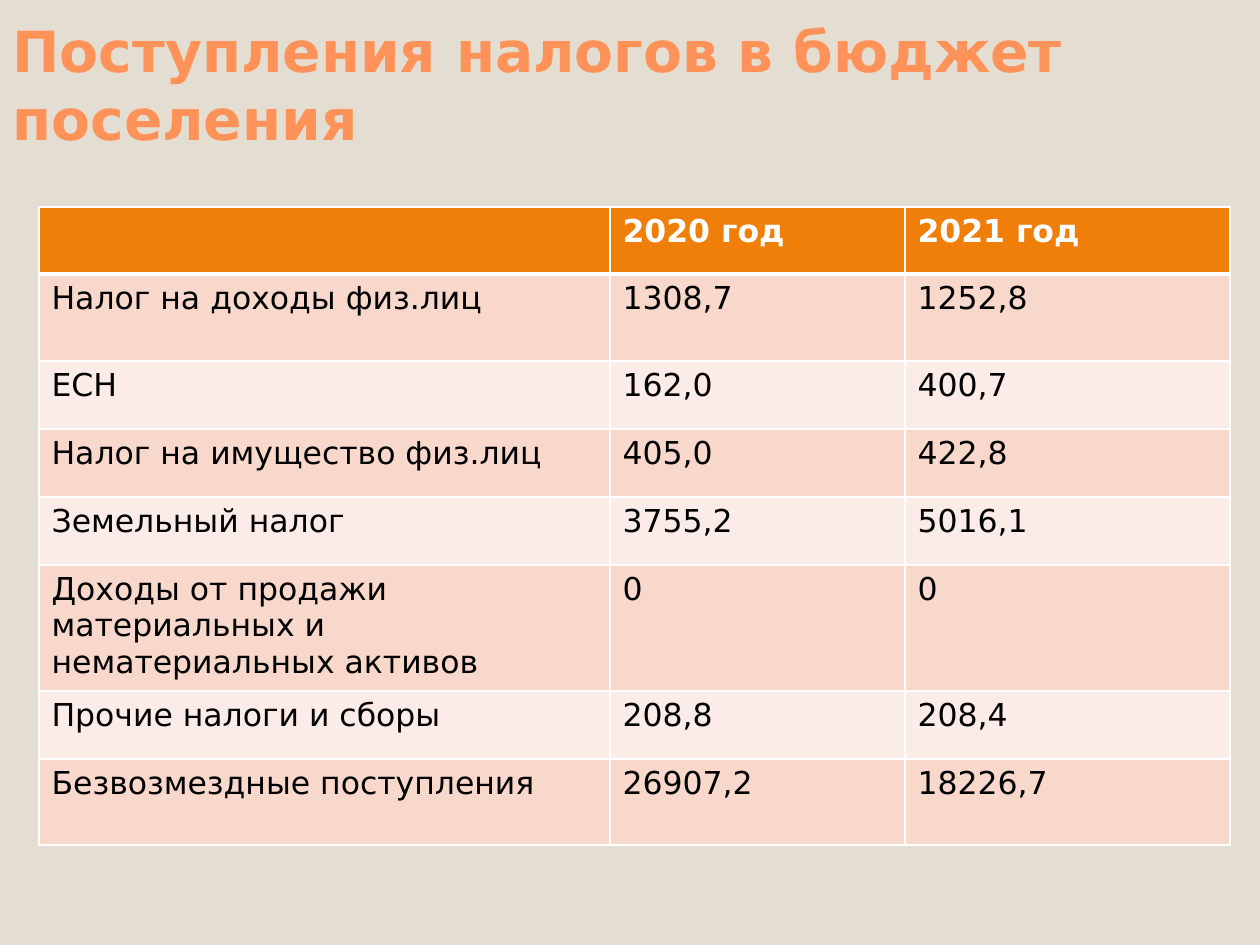
"""Build a slide with a table of tax receipts for two years."""
from dataclasses import dataclass

from lxml import etree
from pptx import Presentation
from pptx import util as u
from pptx.dml.color import RGBColor
from pptx.enum import text
from pptx.oxml.ns import qn

PX = u.Inches(1) // 126
FONT = "DejaVu Sans"
WHITE, BLACK, ORANGE = "FFFFFF", "000000", "F07F09"
BANDS = ("F9D8CC", "FCECE7")
COLUMN_WIDTHS = (571, 295, 325)


@dataclass(frozen=True)
class TableRow:
    height: int
    label: str
    year_2020: str
    year_2021: str

    @property
    def values(self) -> tuple[str, str, str]:
        return self.label, self.year_2020, self.year_2021


ROWS = (
    TableRow(67, "", "2020 год", "2021 год"),
    TableRow(87, "Налог на доходы физ.лиц", "1308,7", "1252,8"),
    TableRow(68, "ЕСН", "162,0", "400,7"),
    TableRow(68, "Налог на имущество физ.лиц", "405,0", "422,8"),
    TableRow(68, "Земельный налог", "3755,2", "5016,1"),
    TableRow(122, "Доходы от продажи материальных и нематериальных активов", "0", "0"),
    TableRow(68, "Прочие налоги и сборы", "208,8", "208,4"),
    TableRow(86, "Безвозмездные поступления", "26907,2", "18226,7"),
)


def px(length: int) -> int:
    return length * PX


def color(value: str) -> RGBColor:
    return RGBColor.from_string(value)


def set_text(frame, content: str, size: float, fill: str, bold: bool) -> None:
    run = frame.paragraphs[0].add_run()
    run.text = content
    for name, value in {"name": FONT, "size": u.Pt(size), "bold": bold}.items():
        setattr(run.font, name, value)
    run.font.color.rgb = color(fill)


def set_borders(cell, bottom: int) -> None:
    properties = cell._tc.get_or_add_tcPr()
    widths = {"a:lnL": 1, "a:lnR": 1, "a:lnT": 1, "a:lnB": bottom}
    for index, (tag, width) in enumerate(widths.items()):
        line = etree.Element(qn(tag), w=str(u.Pt(width)))
        fill = etree.SubElement(line, qn("a:solidFill"))
        etree.SubElement(fill, qn("a:srgbClr"), val=WHITE)
        properties.insert(index, line)


def add_title(slide, content: str) -> None:
    frame = slide.shapes.add_textbox(0, px(32), px(1231), px(126)).text_frame
    for name, value in {"word_wrap": True, "vertical_anchor": text.MSO_ANCHOR.BOTTOM}.items():
        setattr(frame, name, value)
    set_text(frame, content, 32.4, "FF9258", True)


def add_receipts_table(slide, rows: tuple[TableRow, ...]) -> None:
    width, height = sum(COLUMN_WIDTHS), sum(row.height for row in rows)
    table = slide.shapes.add_table(
        len(rows), len(COLUMN_WIDTHS), px(39), px(207), px(width), px(height)
    ).table
    for column, column_width in zip(table.columns, COLUMN_WIDTHS):
        column.width = px(column_width)
    for index, row in enumerate(rows):
        header = index == 0
        table.rows[index].height = px(row.height)
        for cell, content in zip(table.rows[index].cells, row.values):
            cell.fill.solid()
            cell.fill.fore_color.rgb = color(ORANGE if header else BANDS[(index - 1) % 2])
            set_borders(cell, 3 if header else 1)
            if content:
                set_text(cell.text_frame, content, 18, WHITE if header else BLACK, header)


def main() -> None:
    presentation = Presentation()
    presentation.slide_width, presentation.slide_height = u.Inches(10), u.Inches(7.5)
    slide = presentation.slides.add_slide(presentation.slide_layouts[6])
    slide.background.fill.solid()
    slide.background.fill.fore_color.rgb = color("E3DED1")
    add_title(slide, "Поступления налогов в бюджет поселения")
    add_receipts_table(slide, ROWS)
    presentation.save("out.pptx")


if __name__ == "__main__":
    main()
